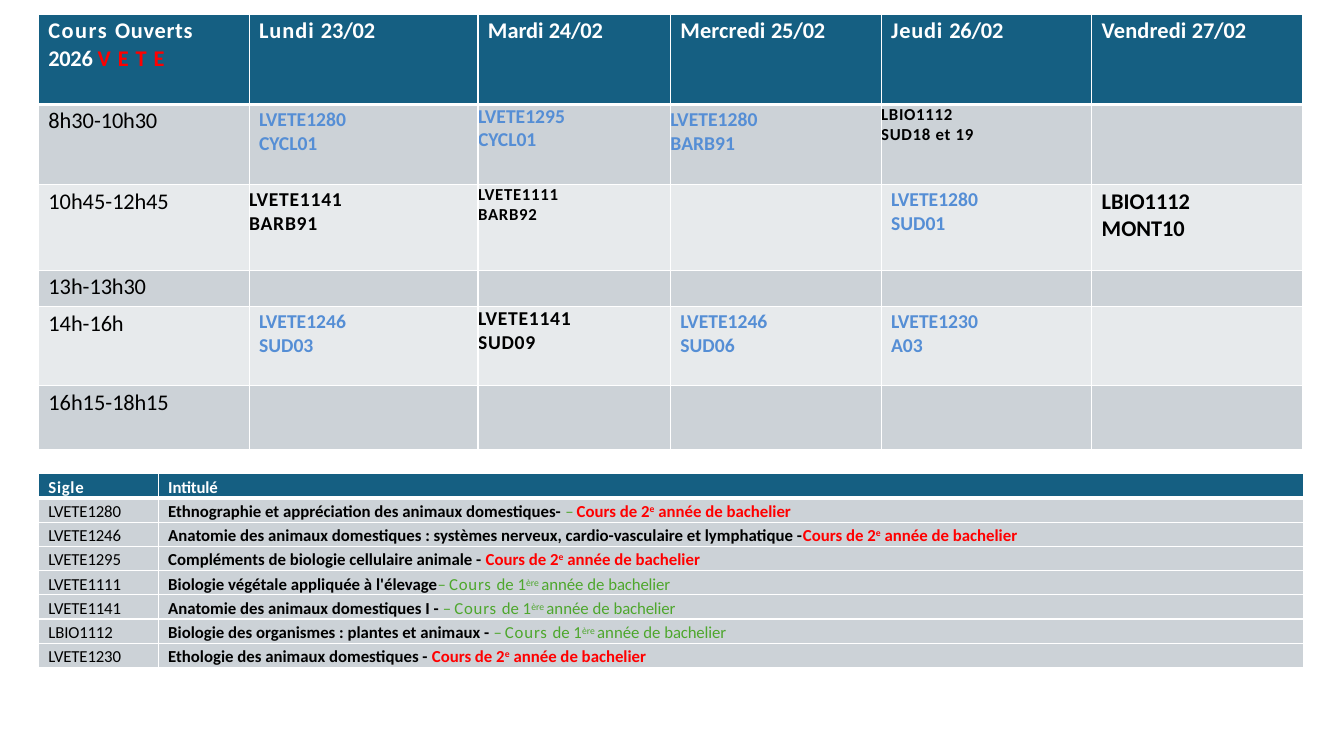
from lxml import etree
from pptx import Presentation
from pptx import util as u
from pptx.dml.color import RGBColor
from pptx.oxml.ns import qn

WHITE = RGBColor(0xFF, 0xFF, 0xFF)
BLACK = RGBColor(0, 0, 0)
RED = RGBColor(0xFF, 0, 0)
GREEN = RGBColor(0x4E, 0xA7, 0x2D)
BLUE = RGBColor(0x55, 0x8E, 0xD5)
HEADER = RGBColor(0x15, 0x5F, 0x82)
GREY = RGBColor(0xCC, 0xD2, 0xD7)
LIGHT = RGBColor(0xE7, 0xEA, 0xEC)
INDENT = u.Cm(0.25)


def run(text, size, color, bold=False, spc=0, base=0):
    return dict(text=text, size=size, color=color, bold=bold, spc=spc, base=base)


def add_run(p, fmt):
    """Add one run, with a line break at each newline."""
    for i, line in enumerate(fmt["text"].split("\n")):
        if i:
            p.add_line_break()
            etree.SubElement(p._p[-1], qn("a:rPr"), sz=str(fmt["size"] * 100))
        r = p.add_run()
        r.text = line
        for name, value in dict(name="Calibri", size=u.Pt(fmt["size"]), bold=fmt["bold"]).items():
            setattr(r.font, name, value)
        r.font.color.rgb = fmt["color"]
        rPr = r._r.get_or_add_rPr()
        for name, factor in (("spc", 100), ("base", 1000)):
            if fmt[name]:
                rPr.set({"base": "baseline"}.get(name, name), str(round(fmt[name] * factor)))


def set_borders(cell, widths):
    tcPr = cell._tc.get_or_add_tcPr()
    for i, (side, width) in enumerate(widths.items()):
        ln = etree.Element(qn("a:" + side), w=str(u.Pt(width)))
        fill = etree.SubElement(ln, qn("a:solidFill"))
        etree.SubElement(fill, qn("a:srgbClr"), val=str(WHITE))
        tcPr.insert(i, ln)


def fill_cell(cell, runs, fill, row, top=0, indent=0):
    for side, margin in dict(left=0, right=0, top=top, bottom=0).items():
        setattr(cell, "margin_" + side, margin)
    cell.fill.solid()
    cell.fill.fore_color.rgb = fill
    set_borders(cell, dict(lnL=1, lnR=1, lnT=3 if row == 1 else 1, lnB=3 if row == 0 else 1))
    p = cell.text_frame.paragraphs[0]
    if indent:
        p._p.get_or_add_pPr().set("marL", str(indent))
    for fmt in runs:
        add_run(p, fmt)


def add_grid(s, left, top, widths, heights):
    tbl = s.shapes.add_table(len(heights), len(widths), left, top, sum(widths), sum(heights)).table
    for col, width in zip(tbl.columns, widths):
        col.width = width
    for row, height in zip(tbl.rows, heights):
        row.height = height
    return tbl


# Weekly timetable: text, size, colour, spacing, top margin, indented
DAYS = [("Lundi ", "23/02", 0.7), ("Mardi ", "24/02", 0), ("Mercredi ", "25/02", 0.1),
        ("Jeudi ", "26/02", 0.6), ("Vendredi ", "27/02", 0.1)]
SLOTS = [("8h30-", "10h30"), ("10h45-", "12h45"), ("13h-", "13h30"), ("14h-", "16h"),
         ("16h15-", "18h15")]
COURSES = {
    (1, 1): ("LVETE1280\nCYCL01", 14, BLUE, 0, 0.08, True),
    (1, 2): ("LVETE1295\nCYCL01", 14, BLUE, 0, 0, False),
    (1, 3): ("LVETE1280\nBARB91", 14, BLUE, 0, 0.08, False),
    (1, 4): ("LBIO1112\nSUD18 et 19", 12, BLACK, 0.5, 0, False),
    (2, 1): ("LVETE1141\nBARB91", 14, BLACK, 0.5, 0.08, False),
    (2, 2): ("LVETE1111\nBARB92", 12, BLACK, 0.5, 0, False),
    (2, 4): ("LVETE1280\nSUD01", 14, BLUE, 0, 0.08, True),
    (2, 5): ("LBIO1112\nMONT10", 16, BLACK, 0, 0.08, True),
    (4, 1): ("LVETE1246\nSUD03", 14, BLUE, 0, 0.08, True),
    (4, 2): ("LVETE1141\nSUD09", 14, BLACK, 0.5, 0, False),
    (4, 3): ("LVETE1246\nSUD06", 14, BLUE, 0, 0.08, True),
    (4, 4): ("LVETE1230\nA03", 14, BLUE, 0, 0.08, True),
}


def add_timetable(s, left, top):
    widths = [u.Cm(w) for w in (5.31, 5.77, 4.85, 5.31, 5.31, 5.31)]
    heights = [u.Cm(h) for h in (2.27, 2.02, 2.16, 0.92, 1.99, 1.6)]
    tbl = add_grid(s, left, top, widths, heights)
    margin = u.Cm(0.08)

    # Header row
    corner = [run("Cours ", 16, WHITE, True, 1.1), run("Ouverts ", 16, WHITE, True, 0.5),
              run("2026 ", 16, WHITE, True, -0.2), run("VETE", 16, RED, True, 5)]
    days = [[run(day, 16, WHITE, True, spc), run(date, 16, WHITE, True, -0.1)]
            for day, date, spc in DAYS]
    for c, runs in enumerate([corner] + days):
        fill_cell(tbl.cell(0, c), runs, HEADER, 0, margin, INDENT)
    tbl.cell(0, 0).margin_right = u.Cm(0.5)

    # Time slots and courses
    for row, (start, end) in enumerate(SLOTS, 1):
        fill = GREY if row % 2 else LIGHT
        hours = [run(start, 16, BLACK), run(end, 16, BLACK, spc=-0.1)]
        fill_cell(tbl.cell(row, 0), hours, fill, row, margin, INDENT)
        for c in range(1, len(widths)):
            cell = tbl.cell(row, c)
            if (row, c) in COURSES:
                text, size, color, spc, inset, indented = COURSES[row, c]
                fill_cell(cell, [run(text, size, color, True, spc)], fill, row,
                          u.Cm(inset), INDENT if indented else 0)
            else:
                fill_cell(cell, [], fill, row)


# Course titles
DASH = [run("– ", 12, GREEN, spc=-0.6)]
YEAR_1 = DASH + [run("Cours ", 12, GREEN, spc=0.6), run("de 1", 12, GREEN),
                 run("ère ", 12, GREEN, base=24), run("année de ", 12, GREEN),
                 run("bachelier", 12, GREEN, spc=-0.1)]
YEAR_2 = [run("Cours de 2", 12, RED, True), run("e", 12, RED, True, base=30),
          run(" année de bachelier", 12, RED, True)]
TITLES = [
    ("LVETE1280", "Ethnographie et appréciation des animaux domestiques- ", DASH + YEAR_2),
    ("LVETE1246", "Anatomie des animaux domestiques : systèmes nerveux, "
                  "cardio-vasculaire et lymphatique -", YEAR_2),
    ("LVETE1295", "Compléments de biologie cellulaire animale - ", YEAR_2),
    ("LVETE1111", "Biologie végétale appliquée à l'élevage", YEAR_1),
    ("LVETE1141", "Anatomie des animaux domestiques I - ", YEAR_1),
    ("LBIO1112", "Biologie des organismes : plantes et animaux - ", YEAR_1),
    ("LVETE1230", "Ethologie des animaux domestiques - ", YEAR_2),
]


def add_titles(s, left, top):
    heights = [u.Cm(0.61)] * (len(TITLES) + 1)
    tbl = add_grid(s, left, top, [u.Cm(3.02), u.Cm(28.85)], heights)
    rows = [([run("Sigle", 12, WHITE, True, 0.5)], [run("Intitulé", 12, WHITE, True, -0.1)])]
    rows += [([run(code, 12, BLACK, spc=-0.1)], [run(title, 12, BLACK, True)] + year)
             for code, title, year in TITLES]
    for row, cells in enumerate(rows):
        for c, runs in enumerate(cells):
            fill_cell(tbl.cell(row, c), runs, GREY if row else HEADER, row, u.Cm(0.09), INDENT)


def main():
    prs = Presentation()
    prs.slide_width, prs.slide_height = u.Cm(33.87), u.Cm(19.05)
    s = prs.slides.add_slide(prs.slide_layouts[6])
    add_timetable(s, u.Cm(0.97), u.Cm(0.36))
    add_titles(s, u.Cm(0.97), u.Cm(11.94))
    prs.save("out.pptx")


if __name__ == "__main__":
    main()
